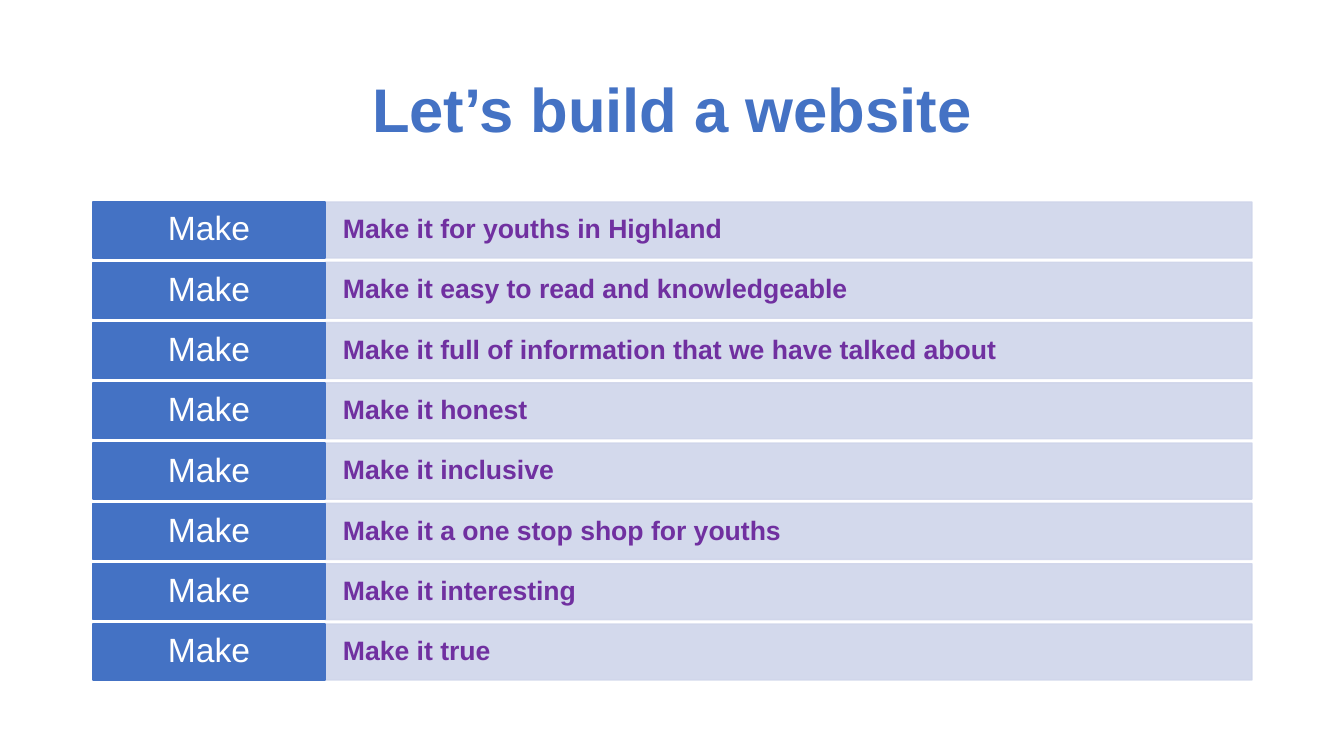
from dataclasses import dataclass

from lxml import etree
from pptx import Presentation, util as u
from pptx.dml.color import RGBColor
from pptx.enum import shapes, text
from pptx.oxml import ns

SCALE = 914400 / 100.8


@dataclass(frozen=True)
class Theme:
    font: str = "Arial"
    blue: str = "4472C4"
    pale: str = "CFD5EA"
    plum: str = "7030A0"
    white: str = "FFFFFF"
    head: int = 44
    tag: int = 24
    body: int = 19


@dataclass(frozen=True)
class Style:
    left: int
    width: int
    fill: str
    alpha: int
    ink: str
    size: int
    bold: bool
    align: text.PP_ALIGN
    pad_x: int
    pad_y: int


THEME = Theme()
TAG = Style(93, 232, THEME.blue, 100, THEME.white, THEME.tag, False,
            text.PP_ALIGN.CENTER, 12, 6)
GOAL = Style(325, 927, THEME.pale, 90, THEME.plum, THEME.body, True,
             text.PP_ALIGN.LEFT, 18, 14)
GOALS = [
    "Make it for youths in Highland",
    "Make it easy to read and knowledgeable",
    "Make it full of information that we have talked about",
    "Make it honest",
    "Make it inclusive",
    "Make it a one stop shop for youths",
    "Make it interesting",
    "Make it true",
]
TOP, SPAN, HIGH = 202, 422, 56


def px(size: float) -> int:
    return round(size * SCALE)


def write(frame, words: str, size: int, ink: str, bold: bool,
          align: text.PP_ALIGN) -> None:
    frame.text = words
    frame.word_wrap = True
    frame.auto_size = text.MSO_AUTO_SIZE.NONE
    frame.vertical_anchor = text.MSO_ANCHOR.MIDDLE
    para = frame.paragraphs[0]
    para.alignment = align
    para.line_spacing = 0.9
    font = para.runs[0].font
    font.name = THEME.font
    font.size = u.Pt(size)
    font.bold = bold
    font.color.rgb = RGBColor.from_string(ink)


def fade(shape, alpha: int) -> None:
    for color in shape._element.spPr.iter(ns.qn("a:srgbClr")):
        etree.SubElement(color, ns.qn("a:alpha")).set("val", str(alpha * 1000))


def draw(slide, style: Style, top: float, words: str) -> None:
    box = slide.shapes.add_shape(
        shapes.MSO_SHAPE.RECTANGLE,
        px(style.left), px(top), px(style.width), px(HIGH))
    box.shadow.inherit = False
    box.fill.solid()
    box.fill.fore_color.rgb = RGBColor.from_string(style.fill)
    box.line.color.rgb = RGBColor.from_string(style.fill)
    box.line.width = u.Pt(1)
    if style.alpha < 100:
        fade(box, style.alpha)
    frame = box.text_frame
    frame.margin_left = frame.margin_right = px(style.pad_x)
    frame.margin_top = frame.margin_bottom = px(style.pad_y)
    write(frame, words, style.size, style.ink, style.bold, style.align)


def main() -> None:
    deck = Presentation()
    deck.slide_width, deck.slide_height = px(1344), px(756)
    slide = deck.slides.add_slide(deck.slide_layouts[5])
    title = slide.shapes.title
    title.left, title.top = px(93), px(40)
    title.width, title.height = px(1159), px(146)
    write(title.text_frame, "Let’s build a website", THEME.head, THEME.blue,
          True, text.PP_ALIGN.CENTER)
    step = SPAN / (len(GOALS) - 1)
    for row, goal in enumerate(GOALS):
        top = TOP + row * step
        draw(slide, GOAL, top, goal)
        draw(slide, TAG, top, "Make")
    deck.save("out.pptx")


if __name__ == "__main__":
    main()
